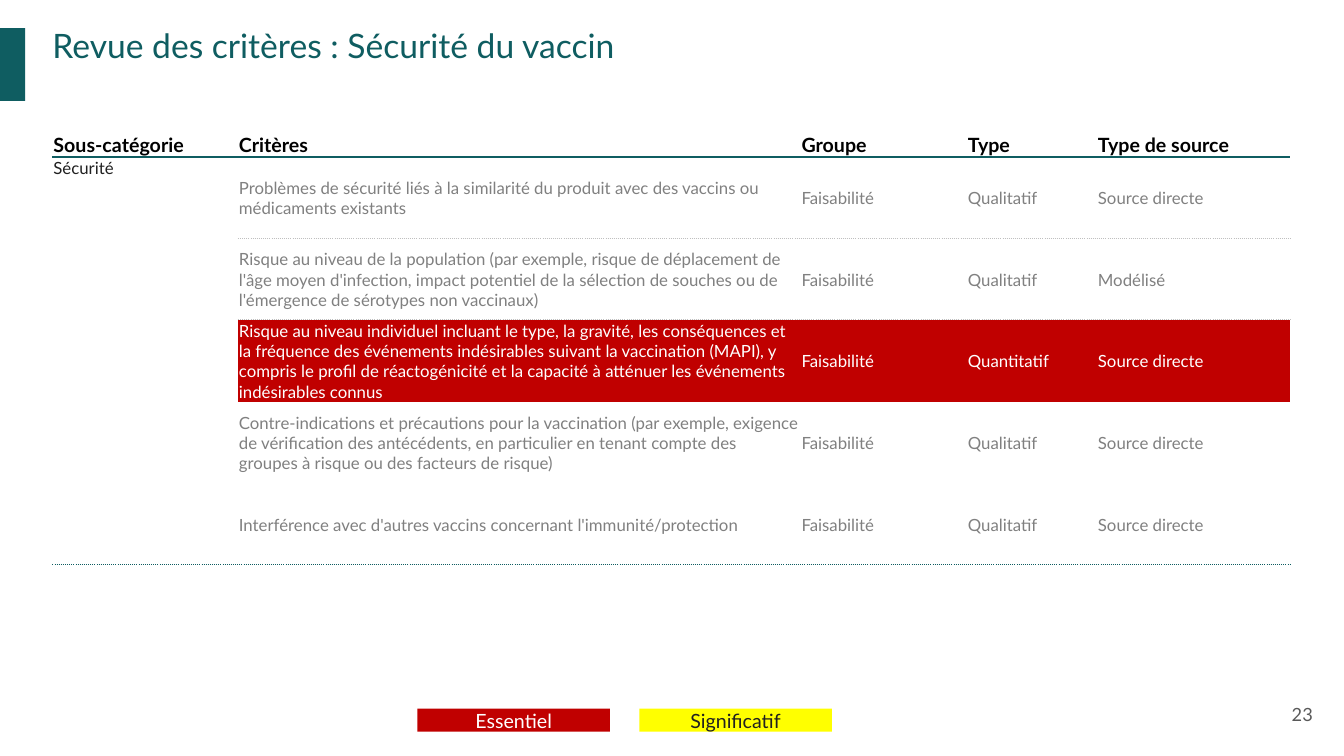
from dataclasses import dataclass
from typing import Optional

from lxml.etree import SubElement
from pptx import Presentation
from pptx.dml.color import RGBColor
from pptx.enum.shapes import MSO_SHAPE
from pptx.enum.text import MSO_ANCHOR, MSO_AUTO_SIZE, PP_ALIGN
from pptx.oxml import parse_xml
from pptx.oxml.ns import nsdecls, qn
from pptx.util import Emu, Pt

PX = 9144  # one px is a hundredth of an inch
TEAL, RED, YELLOW = "0F5D61", "C00000", "FFFF00"
WHITE, BLACK, INK, GREY = "FFFFFF", "000000", "202020", "808080"
PLAIN_TABLE = "{2D5ABB26-0587-4C30-8999-92F81FD0307C}"


@dataclass
class Criterion:
    text: str
    kind: str = "Qualitatif"
    source: str = "Source directe"
    group: str = "Faisabilité"
    fill: str = WHITE
    color: str = GREY


@dataclass
class Rule:
    color: str
    points: float
    dash: str = "solid"


@dataclass
class Badge:
    text: str
    left: int
    fill: str
    color: str


HEADERS = ["Sous-catégorie", "Critères", "Groupe", "Type", "Type de source"]
COLUMN_WIDTHS = [184, 558, 165, 129, 192]
HEADER_HEIGHT, ROW_HEIGHT = 22, 81
CRITERIA = [
    Criterion("Problèmes de sécurité liés à la similarité du produit avec des vaccins "
              "ou médicaments existants"),
    Criterion("Risque au niveau de la population (par exemple, risque de déplacement de "
              "l'âge moyen d'infection, impact potentiel de la sélection de souches ou de "
              "l'émergence de sérotypes non vaccinaux)", source="Modélisé"),
    Criterion("Risque au niveau individuel incluant le type, la gravité, les conséquences "
              "et la fréquence des événements indésirables suivant la vaccination (MAPI), "
              "y compris le profil de réactogénicité et la capacité à atténuer les "
              "événements indésirables connus",
              kind="Quantitatif", fill=RED, color=WHITE),
    Criterion("Contre-indications et précautions pour la vaccination (par exemple, exigence "
              "de vérification des antécédents, en particulier en tenant compte des groupes "
              "à risque ou des facteurs de risque)"),
    Criterion("Interférence avec d'autres vaccins concernant l'immunité/protection"),
]
LAST = len(CRITERIA)
# Rules keyed by the row they lie under
RULES = {
    0: Rule(TEAL, 1.5),
    1: Rule("BFBFBF", 0.75, "sysDot"),
    LAST: Rule(TEAL, 1, "sysDot"),
}
BADGES = [
    Badge("Essentiel", 414, RED, WHITE),
    Badge("Significatif", 634, YELLOW, INK),
]


def px(length: int) -> Emu:
    return Emu(length * PX)


def rgb(value: str) -> RGBColor:
    return RGBColor.from_string(value)


def write(frame, text: str, *, size: int, color: str, bold: bool = False,
          align=PP_ALIGN.LEFT, anchor=MSO_ANCHOR.MIDDLE,
          inset: Optional[int] = None) -> None:
    frame.word_wrap = True
    frame.vertical_anchor = anchor
    if inset is not None:
        frame.margin_left = frame.margin_right = px(inset)
        frame.margin_top = frame.margin_bottom = px(inset)
    para = frame.paragraphs[0]
    para.alignment = align
    span = para.add_run()
    span.text = text
    span.font.name = "Lato"
    span.font.size = Pt(size)
    span.font.bold = bold
    span.font.color.rgb = rgb(color)


def add_box(page, left: int, top: int, width: int, height: int, fill: str):
    box = page.shapes.add_shape(MSO_SHAPE.RECTANGLE, px(left), px(top), px(width), px(height))
    box.shadow.inherit = False
    box.fill.solid()
    box.fill.fore_color.rgb = rgb(fill)
    box.line.fill.background()
    return box


def fill_cell(cell, text: str, *, size: int = 12, color: str = GREY, bold: bool = False,
              fill: Optional[str] = None, anchor=MSO_ANCHOR.MIDDLE) -> None:
    cell.margin_left = cell.margin_right = cell.margin_top = px(1)
    cell.margin_bottom = px(0)
    write(cell.text_frame, text, size=size, color=color, bold=bold)
    cell.vertical_anchor = anchor
    if fill:
        cell.fill.solid()
        cell.fill.fore_color.rgb = rgb(fill)
    else:
        cell.fill.background()


def rule_cell(cell, above: Optional[Rule], below: Optional[Rule]) -> None:
    properties = cell._tc.get_or_add_tcPr()
    position = 0
    for tag, rule in (("lnT", above), ("lnB", below)):
        if rule:
            line = parse_xml(f'<a:{tag} {nsdecls("a")} w="{Pt(rule.points)}"/>')
            solid = SubElement(line, qn("a:solidFill"))
            SubElement(solid, qn("a:srgbClr"), val=rule.color)
            SubElement(line, qn("a:prstDash"), val=rule.dash)
            properties.insert(position, line)
            position += 1


def add_criteria_table(page) -> None:
    frame = page.shapes.add_table(LAST + 1, len(HEADERS), px(52), px(131),
                                  px(sum(COLUMN_WIDTHS)),
                                  px(HEADER_HEIGHT + LAST * ROW_HEIGHT))
    table = frame.table
    table.horz_banding = False
    table._tbl.tblPr.find(qn("a:tableStyleId")).text = PLAIN_TABLE
    for column, width in zip(table.columns, COLUMN_WIDTHS):
        column.width = px(width)
    for index, row in enumerate(table.rows):
        row.height = px(ROW_HEIGHT if index else HEADER_HEIGHT)

    # Header and merged subcategory
    for column, header in enumerate(HEADERS):
        fill_cell(table.cell(0, column), header, size=14, color=BLACK, bold=True,
                  anchor=MSO_ANCHOR.MIDDLE if column else MSO_ANCHOR.BOTTOM)
    category = table.cell(1, 0)
    category.merge(table.cell(LAST, 0))
    fill_cell(category, "Sécurité", color=INK, anchor=MSO_ANCHOR.TOP)

    # Criteria
    for row, item in enumerate(CRITERIA, start=1):
        for column, text in enumerate([item.text, item.group, item.kind, item.source], start=1):
            fill_cell(table.cell(row, column), text, color=item.color, fill=item.fill)

    # Rules between rows
    for row in range(LAST + 1):
        for column in range(1, len(HEADERS)):
            rule_cell(table.cell(row, column), RULES.get(row - 1), RULES.get(row))
    rule_cell(table.cell(0, 0), None, RULES[0])
    rule_cell(category, RULES[0], RULES[LAST])
    rule_cell(table.cell(LAST, 0), None, RULES[LAST])


def main() -> None:
    deck = Presentation()
    deck.slide_width, deck.slide_height = px(1333), px(750)
    page = deck.slides.add_slide(deck.slide_layouts[5])

    # Title and accent
    add_box(page, -1, 28, 26, 72, TEAL)
    title = page.shapes.title
    title.left, title.top, title.width, title.height = px(52), px(25), px(1255), px(80)
    write(title.text_frame, "Revue des critères : Sécurité du vaccin", size=24, color=TEAL,
          anchor=MSO_ANCHOR.TOP, inset=0)
    title.text_frame.auto_size = MSO_AUTO_SIZE.NONE

    # Page number
    number = page.shapes.add_textbox(px(1235), px(680), px(80), px(57))
    write(number.text_frame, "23", size=13, color="595959", align=PP_ALIGN.RIGHT, inset=13)

    add_criteria_table(page)

    # Legend
    for badge in BADGES:
        box = add_box(page, badge.left, 703, 191, 23, badge.fill)
        write(box.text_frame, badge.text, size=14, color=badge.color, align=PP_ALIGN.CENTER)

    deck.save("out.pptx")


if __name__ == "__main__":
    main()
